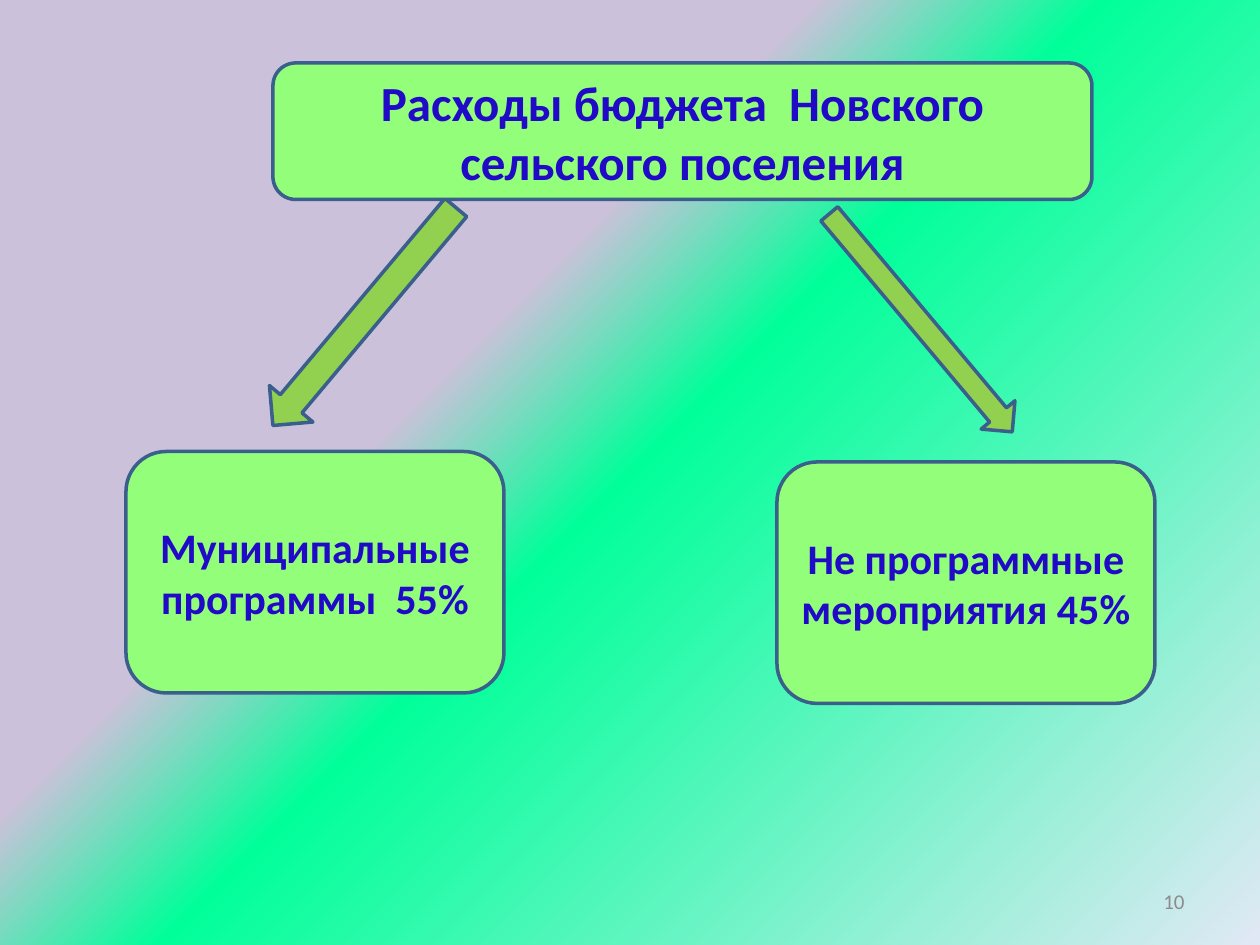
from lxml.etree import SubElement
from pptx import Presentation
from pptx.dml.color import RGBColor
from pptx.enum.shapes import MSO_SHAPE as Shape
from pptx.enum.text import MSO_ANCHOR as Anchor, PP_ALIGN as Align
from pptx.oxml.ns import qn
from pptx.util import Emu, Pt

EMU_PER_PX = 7620
LIME = RGBColor(0x93, 0xFE, 0x7A)
GREEN = RGBColor(0x92, 0xD0, 0x50)
OUTLINE = RGBColor(0x3A, 0x5F, 0x8C)
NAVY = RGBColor(0x20, 0x09, 0xC7)
GRAY = RGBColor(0x8C, 0x8C, 0x8C)
LILAC = RGBColor(0xCC, 0xC1, 0xDA)
MINT = RGBColor(0x00, 0xFF, 0x99)
PALE = RGBColor(0xE1, 0xE8, 0xF5)
BACKGROUND_STOPS = [(37, LILAC), (50, MINT), (100, PALE)]


def px(*lengths):
    return [Emu(length * EMU_PER_PX) for length in lengths]


def paint_background(slide):
    fill = slide.background.fill
    fill.gradient()
    fill.gradient_angle = 315
    stop_list = slide.background._cSld.find(".//" + qn("a:gsLst"))
    for stop in list(stop_list):
        stop_list.remove(stop)
    for percent, color in BACKGROUND_STOPS:
        stop = SubElement(stop_list, qn("a:gs"), pos=str(percent * 1000))
        SubElement(stop, qn("a:srgbClr"), val=str(color))


def write_text(shape, text, color, align, size, bold=False):
    frame = shape.text_frame
    frame.word_wrap = True
    frame.vertical_anchor = Anchor.MIDDLE
    paragraph = frame.paragraphs[0]
    paragraph.alignment = align
    run = paragraph.add_run()
    run.text = text
    font_format = {"name": "Calibri", "size": Pt(size), "bold": bold}
    for name, value in font_format.items():
        setattr(run.font, name, value)
    run.font.color.rgb = color


def add_figure(slide, kind, box, color):
    shape = slide.shapes.add_shape(kind, *px(*box))
    shape.shadow.inherit = False
    shape.fill.solid()
    shape.fill.fore_color.rgb = color
    shape.line.color.rgb = OUTLINE
    shape.line.width = Pt(2)
    return shape


def add_arrow(slide, box, rotation):
    add_figure(slide, Shape.DOWN_ARROW, box, GREEN).rotation = rotation


def add_block(slide, box, text, size):
    block = add_figure(slide, Shape.ROUNDED_RECTANGLE, box, LIME)
    write_text(block, text, NAVY, Align.CENTER, size, bold=True)


def add_page_number(slide, box, text):
    write_text(slide.shapes.add_textbox(*px(*box)), text, GRAY, Align.RIGHT, 12)


def main():
    presentation = Presentation()
    presentation.slide_width, presentation.slide_height = px(1200, 900)
    slide = presentation.slides.add_slide(presentation.slide_layouts[6])
    paint_background(slide)
    add_page_number(slide, (860, 834, 280, 48), "10")
    add_arrow(slide, (856, 172, 42, 271), 320)
    add_arrow(slide, (320, 166, 54, 271), 40)
    add_block(slide, (120, 430, 360, 230), "Муниципальные программы  55%", 24)
    add_block(slide, (740, 440, 360, 230), "Не программные мероприятия 45%", 24)
    add_block(slide, (260, 60, 780, 130), "Расходы бюджета  Новского сельского поселения", 28)
    presentation.save("out.pptx")


if __name__ == "__main__":
    main()
